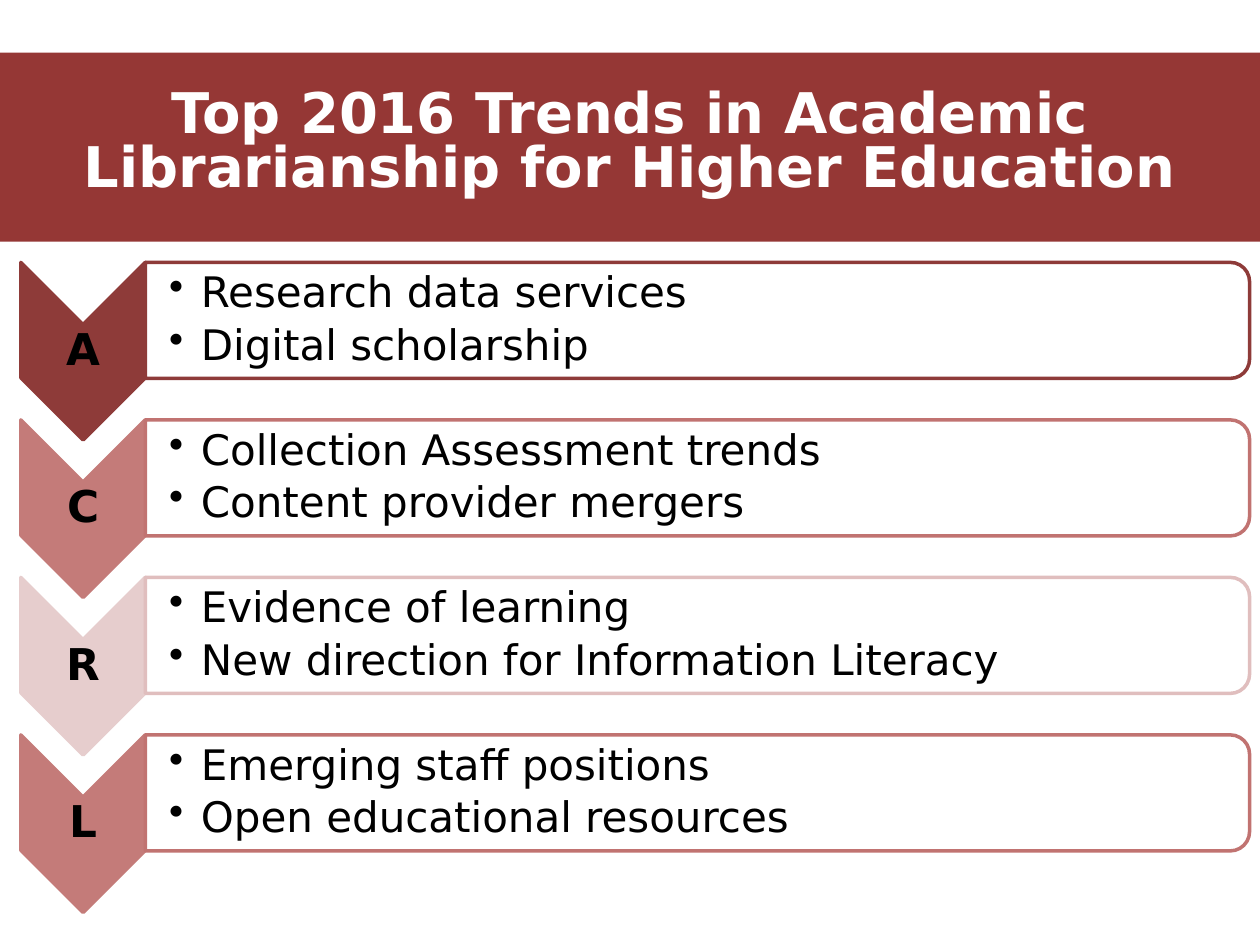
from lxml import etree
from pptx import Presentation
from pptx.dml.color import RGBColor
from pptx.enum import shapes, text
from pptx.oxml import ns
from pptx.util import Cm, Pt

WHITE = RGBColor(0xFF, 0xFF, 0xFF)
BLACK = RGBColor(0, 0, 0)
BANNER_RED = RGBColor(0x95, 0x37, 0x35)
DARK_RED = RGBColor(0x8E, 0x3B, 0x39)
ROSE = RGBColor(0xC4, 0x7B, 0x79)
ROSE_EDGE = RGBColor(0xC1, 0x73, 0x71)
PALE = RGBColor(0xE6, 0xCD, 0xCD)
PALE_EDGE = RGBColor(0xE0, 0xBE, 0xBE)
FONT = "DejaVu Sans"

TRENDS = [
    ("A", DARK_RED, DARK_RED, ["Research data services", "Digital scholarship"]),
    ("C", ROSE, ROSE_EDGE, ["Collection Assessment trends", "Content provider mergers"]),
    ("R", PALE, PALE_EDGE, ["Evidence of learning", "New direction for Information Literacy"]),
    ("L", ROSE, ROSE_EDGE, ["Emerging staff positions", "Open educational resources"]),
]


def style_font(paragraph, size, color, bold=False):
    font = paragraph.font
    font.name, font.size, font.bold = FONT, Pt(size), bold
    font.color.rgb = color


def add_bullet(paragraph):
    properties = paragraph._p.get_or_add_pPr()
    properties.set("marL", str(Cm(0.64)))
    properties.set("indent", str(-Cm(0.64)))
    bullet = etree.SubElement(properties, ns.qn("a:buChar"))
    bullet.set("char", "•")


def add_turned_shape(slide, preset, left, top, width, height, fill, edge):
    shape = slide.shapes.add_shape(
        preset, left + (width - height) // 2, top + (height - width) // 2, height, width)
    shape.rotation = 90
    shape.shadow.inherit = False
    shape.fill.solid()
    shape.fill.fore_color.rgb = fill
    shape.line.color.rgb = edge
    shape.line.width = Pt(2)
    return shape


def add_label(slide, left, top, width, height, left_inset):
    frame = slide.shapes.add_textbox(left, top, width, height).text_frame
    frame.word_wrap = True
    frame.vertical_anchor = text.MSO_ANCHOR.MIDDLE
    frame.margin_left = left_inset
    frame.margin_top = frame.margin_right = frame.margin_bottom = Cm(0.04)
    return frame


def add_banner(slide, left, top, width, height):
    banner = slide.shapes.title
    banner.left, banner.top, banner.width, banner.height = left, top, width, height
    banner.fill.solid()
    banner.fill.fore_color.rgb = BANNER_RED
    frame = banner.text_frame
    frame.text = "Top 2016 Trends in Academic Librarianship for Higher Education"
    frame.word_wrap = True
    frame.auto_size = text.MSO_AUTO_SIZE.NONE
    frame.vertical_anchor = text.MSO_ANCHOR.MIDDLE
    frame.margin_bottom = Cm(0.25)
    heading = frame.paragraphs[0]
    heading.alignment = text.PP_ALIGN.CENTER
    heading.line_spacing = 0.8
    style_font(heading, 32, WHITE, bold=True)


def add_trend(slide, left, top, width, height, trend):
    initial, fill, edge, topics = trend
    arrow_width, panel_height = Cm(2.51), Cm(2.34)
    panel_left, panel_width = left + arrow_width, width - arrow_width

    add_turned_shape(slide, shapes.MSO_SHAPE.CHEVRON,
                     left, top, arrow_width, height, fill, fill)
    letter = add_label(slide, left, top + arrow_width // 2,
                       arrow_width, height - arrow_width, Cm(0.04)).paragraphs[0]
    letter.text = initial
    letter.alignment = text.PP_ALIGN.CENTER
    letter.line_spacing = 0.9
    style_font(letter, 25, BLACK, bold=True)

    add_turned_shape(slide, shapes.MSO_SHAPE.ROUND_2_SAME_RECTANGLE,
                     panel_left, top, panel_width, panel_height, WHITE, edge)
    frame = add_label(slide, panel_left, top + Cm(0.11),
                      panel_width - Cm(0.11), panel_height - Cm(0.22), Cm(0.48))
    frame.text = "\n".join(topics)
    for topic in frame.paragraphs:
        topic.level = 1
        topic.line_spacing = 0.9
        topic.space_after = Pt(4)
        add_bullet(topic)
        style_font(topic, 24, BLACK)


def main():
    deck = Presentation()
    deck.slide_width, deck.slide_height = Cm(25.4), Cm(19.05)
    slide = deck.slides.add_slide(deck.slide_layouts[5])
    add_banner(slide, 0, Cm(1.06), deck.slide_width, Cm(3.81))
    for row, trend in enumerate(TRENDS):
        add_trend(slide, Cm(0.42), Cm(5.29 + 3.175 * row), Cm(24.77), Cm(3.58), trend)
    deck.save("out.pptx")


if __name__ == "__main__":
    main()
